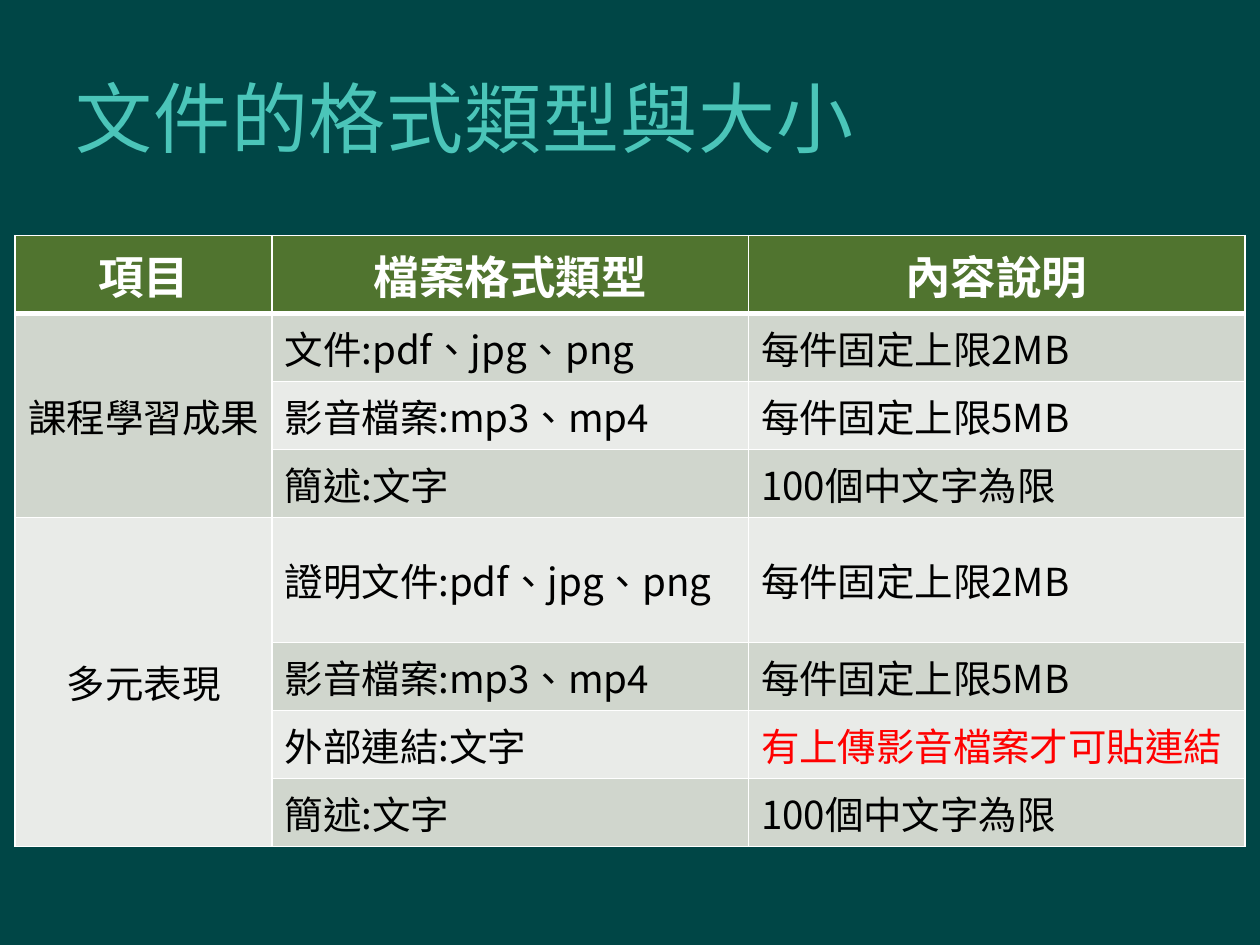
from dataclasses import dataclass

from lxml import etree
from pptx import Presentation
from pptx.dml.color import RGBColor
from pptx.enum.text import MSO_ANCHOR, PP_ALIGN
from pptx.oxml.ns import qn
from pptx.util import Inches, Pt

MIDDLE = MSO_ANCHOR.MIDDLE
LEFT, CENTER = PP_ALIGN.LEFT, PP_ALIGN.CENTER

DEEP_TEAL = RGBColor(0x00, 0x46, 0x46)
AQUA = RGBColor(0x4B, 0xC5, 0xB9)
GREEN = RGBColor(0x50, 0x74, 0x2F)
DARK_BAND = RGBColor(0xD0, 0xD6, 0xCD)
LIGHT_BAND = RGBColor(0xE9, 0xEB, 0xE8)
WHITE = RGBColor(0xFF, 0xFF, 0xFF)
BLACK = RGBColor(0x00, 0x00, 0x00)
RED = RGBColor(0xFF, 0x00, 0x00)

TITLE_FONT = "Roboto"
TABLE_FONT = "Noto Sans CJK SC"
LANGUAGE = "zh-TW"
COLUMN_WIDTHS = (2.04, 3.78, 3.94)
HEADER_HEIGHT, ROW_HEIGHT, TWO_LINE_HEIGHT = 0.62, 0.54, 0.99
THIN, THICK = 1, 3


@dataclass(frozen=True)
class Rule:
    formats: str
    limit: str
    limit_color: RGBColor = BLACK
    height: float = ROW_HEIGHT


@dataclass(frozen=True)
class Section:
    name: str
    rules: tuple[Rule, ...]


@dataclass(frozen=True)
class TextStyle:
    size: float
    color: RGBColor
    font: str = TABLE_FONT
    bold: bool = False
    align: PP_ALIGN = LEFT


HEADINGS = ("項目", "檔案格式類型", "內容說明")
SECTIONS = (
    Section("課程學習成果", (
        Rule("文件:pdf、jpg、png", "每件固定上限2MB"),
        Rule("影音檔案:mp3、mp4", "每件固定上限5MB"),
        Rule("簡述:文字", "100個中文字為限"),
    )),
    Section("多元表現", (
        Rule("證明文件:pdf、jpg、png", "每件固定上限2MB", height=TWO_LINE_HEIGHT),
        Rule("影音檔案:mp3、mp4", "每件固定上限5MB"),
        Rule("外部連結:文字", "有上傳影音檔案才可貼連結", RED),
        Rule("簡述:文字", "100個中文字為限"),
    )),
)
HEADING_STYLE = TextStyle(26, WHITE, bold=True, align=CENTER)
SECTION_STYLE = TextStyle(22, BLACK, align=CENTER)


def write(frame, text: str, style: TextStyle):
    """Fill a text frame with one styled line and return its run."""
    frame.text = text
    para = frame.paragraphs[0]
    para.alignment = style.align
    span = para.runs[0]
    span.font.size = Pt(style.size)
    span.font.bold = style.bold
    span.font.color.rgb = style.color
    span.font.name = style.font
    properties = span.font._element
    properties.set("lang", LANGUAGE)
    etree.SubElement(properties, qn("a:ea")).set("typeface", TABLE_FONT)
    return span


def set_borders(cell, top: float, bottom: float) -> None:
    properties = cell._tc.get_or_add_tcPr()
    for side, width in (("L", THIN), ("R", THIN), ("T", top), ("B", bottom)):
        line = etree.SubElement(properties, qn(f"a:ln{side}"), w=str(Pt(width)))
        fill = etree.SubElement(line, qn("a:solidFill"))
        etree.SubElement(fill, qn("a:srgbClr"), val=str(WHITE))


def style_cell(cell, row: int) -> None:
    """Give a cell the borders and band colour of its row."""
    cell.vertical_anchor = MIDDLE
    set_borders(cell, THICK if row == 1 else THIN, THICK if row == 0 else THIN)
    cell.fill.solid()
    band = DARK_BAND if row % 2 else LIGHT_BAND
    cell.fill.fore_color.rgb = band if row else GREEN


def add_title(page) -> None:
    box = page.shapes.add_textbox(Inches(0.5), Inches(0.3), Inches(8.5), Inches(1.25))
    frame = box.text_frame
    frame.word_wrap = True
    frame.vertical_anchor = MIDDLE
    span = write(frame, "文件的格式類型與大小", TextStyle(44, AQUA, TITLE_FONT))
    span.font._element.set("spc", "50")


def add_format_table(page) -> None:
    heights = [HEADER_HEIGHT]
    heights += [rule.height for section in SECTIONS for rule in section.rules]
    table = page.shapes.add_table(
        len(heights), len(HEADINGS), Inches(0.12), Inches(1.87),
        Inches(sum(COLUMN_WIDTHS)), Inches(sum(heights)),
    ).table
    for column, width in zip(table.columns, COLUMN_WIDTHS):
        column.width = Inches(width)
    for index, (row, height) in enumerate(zip(table.rows, heights)):
        row.height = Inches(height)
        for cell in row.cells:
            style_cell(cell, index)

    for column, heading in enumerate(HEADINGS):
        write(table.cell(0, column).text_frame, heading, HEADING_STYLE)
    first = 1
    for section in SECTIONS:
        last = first + len(section.rules) - 1
        name_cell = table.cell(first, 0)
        name_cell.merge(table.cell(last, 0))
        write(name_cell.text_frame, section.name, SECTION_STYLE)
        for row, rule in enumerate(section.rules, first):
            write(table.cell(row, 1).text_frame, rule.formats, TextStyle(22, BLACK))
            write(table.cell(row, 2).text_frame, rule.limit, TextStyle(22, rule.limit_color))
        first = last + 1


def main() -> None:
    deck = Presentation()
    deck.slide_width, deck.slide_height = Inches(10), Inches(7.5)
    page = deck.slides.add_slide(deck.slide_layouts[6])
    page.background.fill.solid()
    page.background.fill.fore_color.rgb = DEEP_TEAL
    add_title(page)
    add_format_table(page)
    deck.save("out.pptx")


if __name__ == "__main__":
    main()
